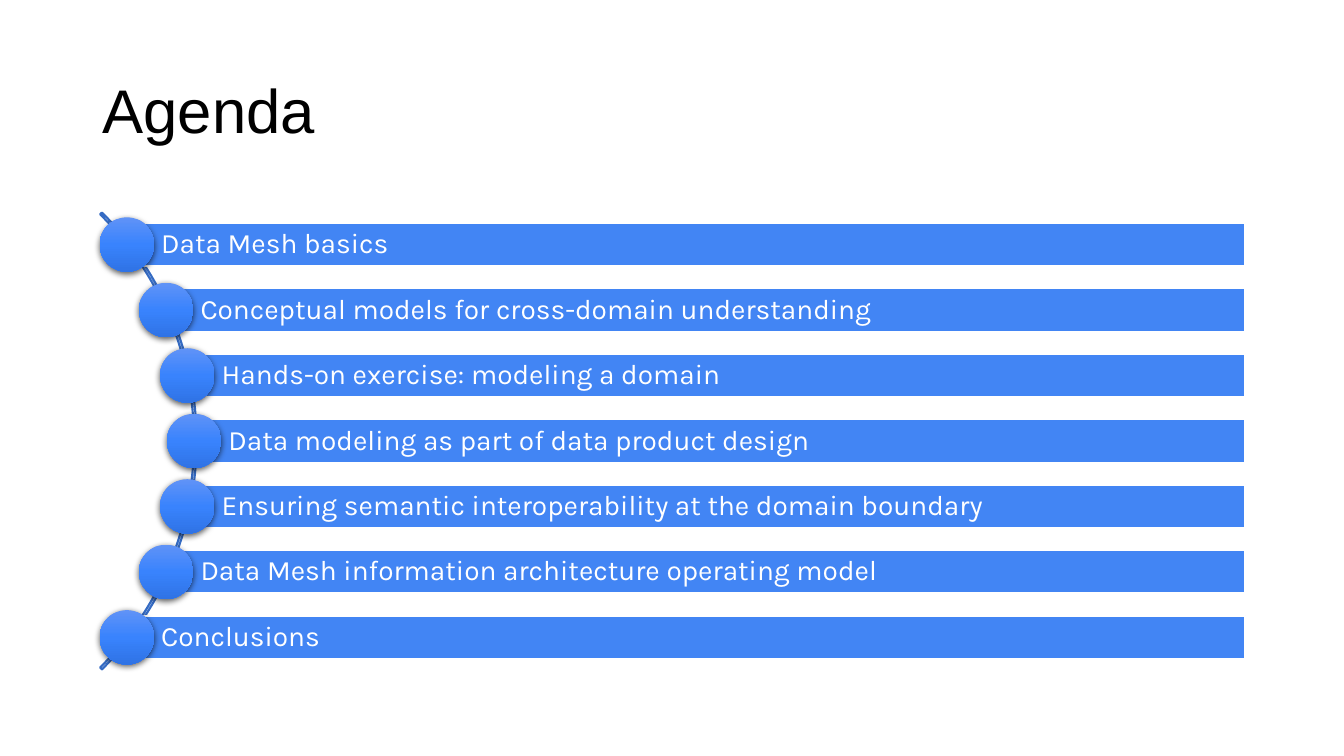
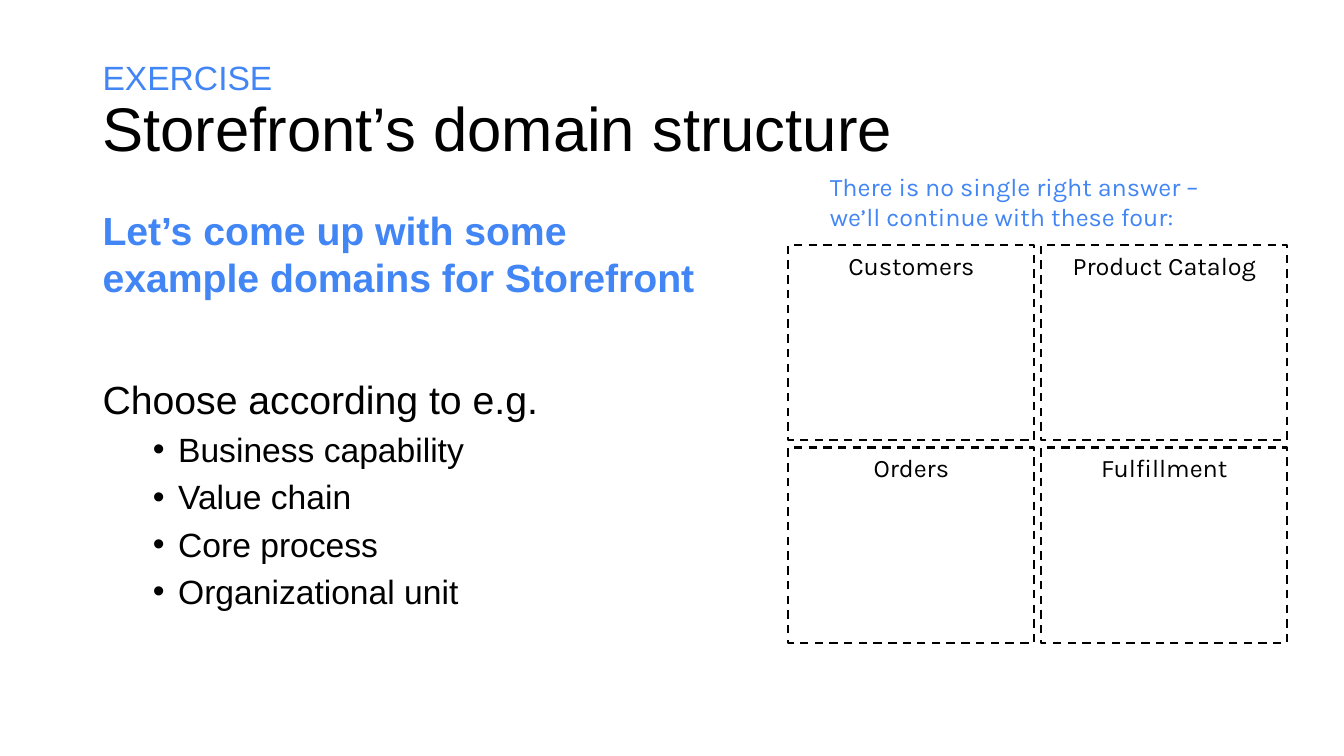
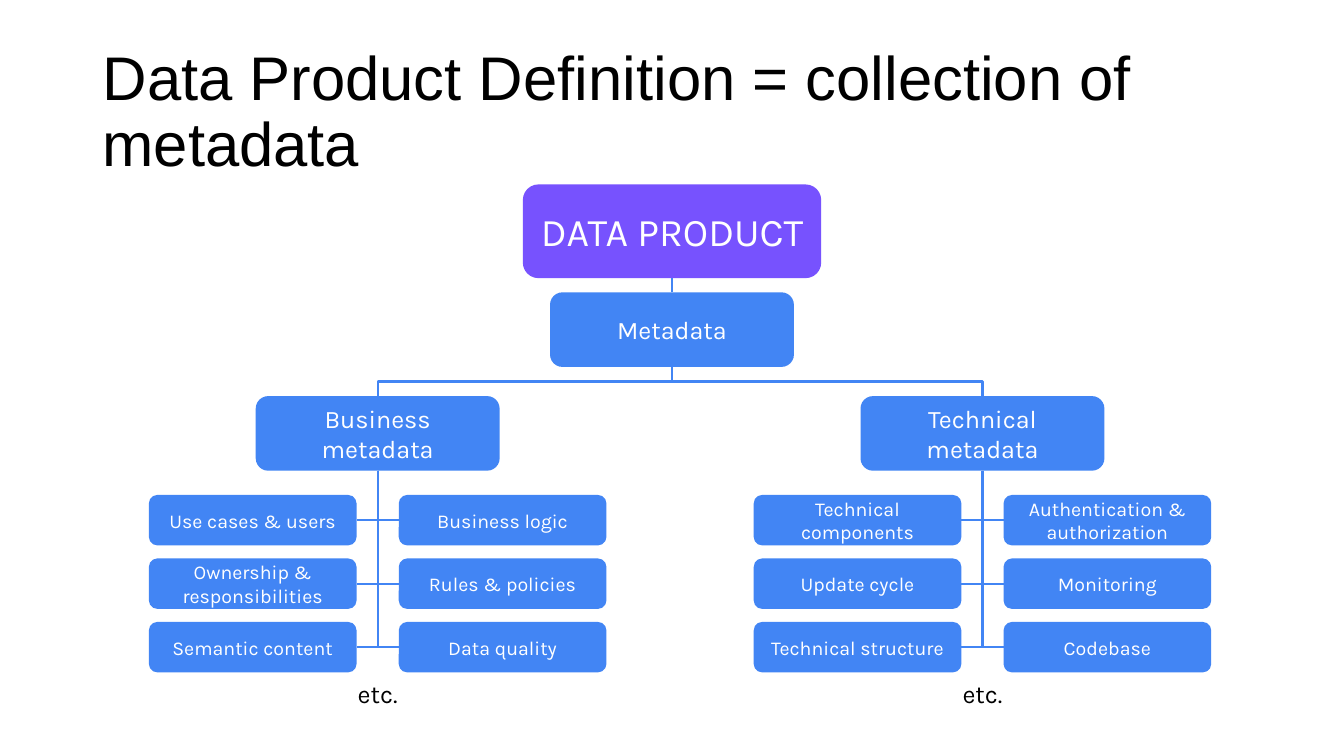
from copy import deepcopy
from math import sqrt

from lxml import etree
from pptx import Presentation
from pptx.dml.color import RGBColor
from pptx.enum.dml import MSO_LINE
from pptx.enum.shapes import MSO_CONNECTOR, MSO_SHAPE
from pptx.enum.text import MSO_ANCHOR, MSO_AUTO_SIZE, PP_ALIGN
from pptx.oxml.ns import qn
from pptx.util import Emu, Inches, Pt

# Shared look
COLORS = {
    "black": "000000", "white": "FFFFFF", "blue": "4285F4", "purple": "7752FE",
    "arc": "356BC3", "dot_top": "6093F7", "dot_middle": "3983FD", "dot_bottom": "2F73E5",
}
TITLE_FONT, TEXT_FONT = "Arial", "Karla"
LINE_WIDTH = Pt(1.5)
SLIDE_WIDTH, SLIDE_HEIGHT = Inches(13.33), Inches(7.5)
TITLE_AND_BODY, TITLE_ONLY = 1, 5

# Enum members
RECTANGLE, ROUNDED, OVAL, ARC = (
    MSO_SHAPE.RECTANGLE, MSO_SHAPE.ROUNDED_RECTANGLE, MSO_SHAPE.OVAL, MSO_SHAPE.BLOCK_ARC)
STRAIGHT, ELBOW = MSO_CONNECTOR.STRAIGHT, MSO_CONNECTOR.ELBOW
LEFT, CENTER = PP_ALIGN.LEFT, PP_ALIGN.CENTER
TOP, MIDDLE = MSO_ANCHOR.TOP, MSO_ANCHOR.MIDDLE
NO_AUTOFIT, DASH = MSO_AUTO_SIZE.NONE, MSO_LINE.DASH

# Connection sites of a box
SITE_TOP, SITE_LEFT, SITE_BOTTOM, SITE_RIGHT = range(4)

# Content
AGENDA = [
    "Data Mesh basics",
    "Conceptual models for cross-domain understanding",
    "Hands-on exercise: modeling a domain",
    "Data modeling as part of data product design",
    "Ensuring semantic interoperability at the domain boundary",
    "Data Mesh information architecture operating model",
    "Conclusions",
]
DOMAINS = ["Customers", "Product Catalog", "Orders", "Fulfillment"]
CRITERIA = ["Business capability", "Value chain", "Core process", "Organizational unit"]
# Branch name, centre in % of the slide width, rows of (left leaf, right leaf)
BRANCHES = [
    ("Business metadata", 28.1, [
        ("Use cases & users", "Business logic"),
        ("Ownership & responsibilities", "Rules & policies"),
        ("Semantic content", "Data quality")]),
    ("Technical metadata", 73.1, [
        ("Technical components", "Authentication & authorization"),
        ("Update cycle", "Monitoring"),
        ("Technical structure", "Codebase")]),
]


def across(percent):
    """Length as a share of the slide's width."""
    return Emu(round(SLIDE_WIDTH * percent / 100))


def down(percent):
    """Length as a share of the slide's height."""
    return Emu(round(SLIDE_HEIGHT * percent / 100))


def area(left, top, width, height):
    return across(left), down(top), across(width), down(height)


def rgb(color):
    return RGBColor.from_string(COLORS[color])


def style_run(run, size, color, font=TEXT_FONT, bold=False):
    run.font.size, run.font.name, run.font.bold = Pt(size), font, bold
    run.font.color.rgb = rgb(color)


def write(shape, text, size, color, align=CENTER, anchor=MIDDLE, wrap=True):
    frame = shape.text_frame
    frame.text = text
    frame.word_wrap, frame.vertical_anchor = wrap, anchor
    frame.paragraphs[0].alignment = align
    style_run(frame.paragraphs[0].runs[0], size, color)


def add_box(slide, kind, bounds, fill=None, line=None):
    shape = slide.shapes.add_shape(kind, *(Emu(round(length)) for length in bounds))
    shape.shadow.inherit = False
    if fill:
        shape.fill.solid()
        shape.fill.fore_color.rgb = rgb(fill)
    else:
        shape.fill.background()
    if line:
        shape.line.color.rgb = rgb(line)
        shape.line.width = LINE_WIDTH
    else:
        shape.line.fill.background()
    return shape


def add_label(slide, bounds, text, color, align=LEFT, wrap=True):
    label = slide.shapes.add_textbox(*bounds)
    write(label, text, 18, color, align, TOP, wrap)


def add_titled_slide(presentation, title, layout=TITLE_ONLY, kicker=None):
    slide = presentation.slides.add_slide(presentation.slide_layouts[layout])
    shape = slide.shapes.title
    shape.left, shape.top, shape.width, shape.height = area(6.88, 5.33, 86.25, 19.33)
    frame = shape.text_frame
    frame.auto_size, frame.vertical_anchor = NO_AUTOFIT, MIDDLE
    paragraph = frame.paragraphs[0]
    paragraph.text = f"{kicker}\v{title}" if kicker else title
    paragraph.alignment, paragraph.line_spacing = LEFT, 0.9
    style_run(paragraph.runs[-1], 44, "black", TITLE_FONT)
    if kicker:
        style_run(paragraph.runs[0], 24, "blue", TITLE_FONT)
        line_break = paragraph._p.find(qn("a:br"))
        etree.SubElement(line_break, qn("a:rPr"), sz="2400")
    return slide


def add_body_line(frame, text, size, color, bold=False, before=0, bullet=False):
    first = not frame.text
    paragraph = frame.paragraphs[0] if first else frame.add_paragraph()
    paragraph.text = text
    paragraph.alignment, paragraph.space_before = LEFT, Pt(before)
    paragraph.level = 1 if bullet else 0
    properties = paragraph._p.get_or_add_pPr()
    properties.set("marL", str(Inches(0.75) if bullet else 0))
    properties.set("indent", str(Inches(-0.25) if bullet else 0))
    if bullet:
        etree.SubElement(properties, qn("a:buFont"), typeface=TITLE_FONT)
        etree.SubElement(properties, qn("a:buChar"), char="•")
    else:
        etree.SubElement(properties, qn("a:buNone"))
    style_run(paragraph.runs[0], size, color, TITLE_FONT, bold)


# Agenda parts
def add_dot(slide, center_x, center_y, size):
    dot = add_box(slide, OVAL, (center_x - size / 2, center_y - size / 2, size, size))
    # Three-stop gradient from top to bottom
    dot.fill.gradient()
    dot.fill.gradient_angle = 270
    properties = dot._element.spPr
    stop_list = properties.find(".//" + qn("a:gsLst"))
    stop_list.append(deepcopy(stop_list[0]))
    stops = zip(dot.fill.gradient_stops, (0, 0.5, 1), ("dot_top", "dot_middle", "dot_bottom"))
    for stop, position, color in stops:
        stop.position, stop.color.rgb = position, rgb(color)
    # Soft shadow below
    shadow = etree.SubElement(
        properties.find(qn("a:effectLst")), qn("a:outerShdw"), blurRad=str(Pt(4.5)),
        dist=str(Pt(1.5)), dir="5400000", algn="ctr", rotWithShape="0")
    shade = etree.SubElement(shadow, qn("a:srgbClr"), val=COLORS["black"])
    etree.SubElement(shade, qn("a:alpha"), val="63000")


def add_agenda_bar(slide, text, left, center_y):
    height = down(5.73)
    bar = add_box(slide, RECTANGLE,
                  (left, center_y - height / 2, across(92.65) - left, height), "blue", "white")
    write(bar, text, 20, "white", LEFT)
    frame = bar.text_frame
    frame.margin_left = Inches(0.34)
    frame.margin_right = frame.margin_top = frame.margin_bottom = Inches(0.06)
    frame.paragraphs[0].line_spacing = 0.9


# Tree parts
def add_node(slide, text, left, top, width, height, size, fill="blue"):
    node = add_box(slide, ROUNDED, area(left, top, width, height), fill)
    write(node, text, size, "white")
    return node


def add_link(slide, parent, child, site=SITE_TOP, kind=STRAIGHT):
    """Connect the bottom of the parent with a site of the child."""
    link = slide.shapes.add_connector(kind, 0, 0, 0, 0)
    link.begin_connect(parent, SITE_BOTTOM)
    link.end_connect(child, site)
    link.line.color.rgb = rgb("blue")
    link.line.width = LINE_WIDTH
    etree.SubElement(link._element.spPr, qn("a:effectLst"))
    return link


def add_elbow(slide, parent, child, site, preset):
    """Bent link that leaves the parent downwards: a sideways elbow, turned."""
    link = add_link(slide, parent, child, site, ELBOW)
    begin_x, begin_y, end_x, end_y = link.begin_x, link.begin_y, link.end_x, link.end_y
    to_right = end_x > begin_x
    length, breadth = end_y - begin_y, abs(end_x - begin_x)
    link.left = Emu((begin_x + end_x - length) // 2)
    link.top = Emu((begin_y + end_y - breadth) // 2)
    link.width, link.height = Emu(length), Emu(breadth)
    properties = link._element.spPr
    frame = properties.find(qn("a:xfrm"))
    frame.set("rot", "16200000" if to_right else "5400000")
    frame.set("flipH", "1" if to_right else "0")
    frame.set("flipV", "0")
    properties.find(qn("a:prstGeom")).set("prst", preset)


# Slides
def build_agenda(presentation):
    slide = add_titled_slide(presentation, "Agenda")
    center_x, center_y = across(-9.41), down(58.33)
    radius, dot_radius = down(42.73), down(42.4)
    arc = add_box(slide, ARC, (center_x - radius, center_y - radius, 2 * radius, 2 * radius),
                  line="arc")
    for index, value in enumerate((189, 27, 0.004)):
        arc.adjustments[index] = value
    for index, text in enumerate(AGENDA):
        offset = (index - (len(AGENDA) - 1) / 2) * down(8.66)
        dot_x = center_x + sqrt(dot_radius ** 2 - offset ** 2)
        add_agenda_bar(slide, text, dot_x, center_y + offset)
        add_dot(slide, dot_x, center_y + offset, down(7.2))


def build_exercise(presentation):
    slide = add_titled_slide(presentation, "Storefront’s domain structure",
                             TITLE_AND_BODY, "EXERCISE")
    body = slide.placeholders[1]
    body.left, body.top, body.width, body.height = area(6.88, 26.67, 46.14, 63.47)
    frame = body.text_frame
    frame.auto_size = NO_AUTOFIT
    add_body_line(frame, "Let’s come up with some example domains for Storefront",
                  28, "blue", bold=True)
    add_body_line(frame, "Choose according to e.g.", 28, "black", before=53)
    for criterion in CRITERIA:
        add_body_line(frame, criterion, 24, "black", before=5, bullet=True)
    # Two by two domain cards
    width, height, gap = across(18.3), down(25.87), down(0.93)
    for index, domain in enumerate(DOMAINS):
        row, column = divmod(index, 2)
        card = add_box(slide, RECTANGLE,
                       (across(58.66) + column * (width + gap),
                        down(32.4) + row * (height + gap), width, height), "white", "black")
        card.line.dash_style = DASH
        write(card, domain, 18, "black", anchor=TOP)
    add_label(slide, area(61, 22, 33, 9.47),
              "There is no single right answer – we’ll continue with these four:", "blue")


def build_definition(presentation):
    slide = add_titled_slide(presentation, "Data Product Definition = collection of metadata")
    node_width, node_height = 18.15, 9.87
    leaf_width, leaf_height, leaf_pitch, half_gap = 15.45, 6.67, 8.4, 1.57
    product = add_node(slide, "DATA PRODUCT", 38.9, 24.4, 22.2, 12.4, 28, "purple")
    metadata = add_node(slide, "Metadata", 50 - node_width / 2, 38.67,
                        node_width, node_height, 18)
    add_link(slide, product, metadata)
    for name, center, rows in BRANCHES:
        branch = add_node(slide, name, center - node_width / 2, 52.4,
                          node_width, node_height, 18)
        add_elbow(slide, metadata, branch, SITE_TOP, "bentConnector3")
        sides = ((center - half_gap - leaf_width, SITE_RIGHT), (center + half_gap, SITE_LEFT))
        for row, names in enumerate(rows):
            for text, (left, site) in zip(names, sides):
                leaf = add_node(slide, text, left, 65.47 + row * leaf_pitch,
                                leaf_width, leaf_height, 14)
                add_elbow(slide, branch, leaf, site, "bentConnector2")
        add_label(slide, area(center - 2.3, 89.07, 4.6, 5.33), "etc.", "black", CENTER, False)


def main():
    presentation = Presentation()
    presentation.slide_width, presentation.slide_height = SLIDE_WIDTH, SLIDE_HEIGHT
    build_agenda(presentation)
    build_exercise(presentation)
    build_definition(presentation)
    presentation.save("out.pptx")


if __name__ == "__main__":
    main()
